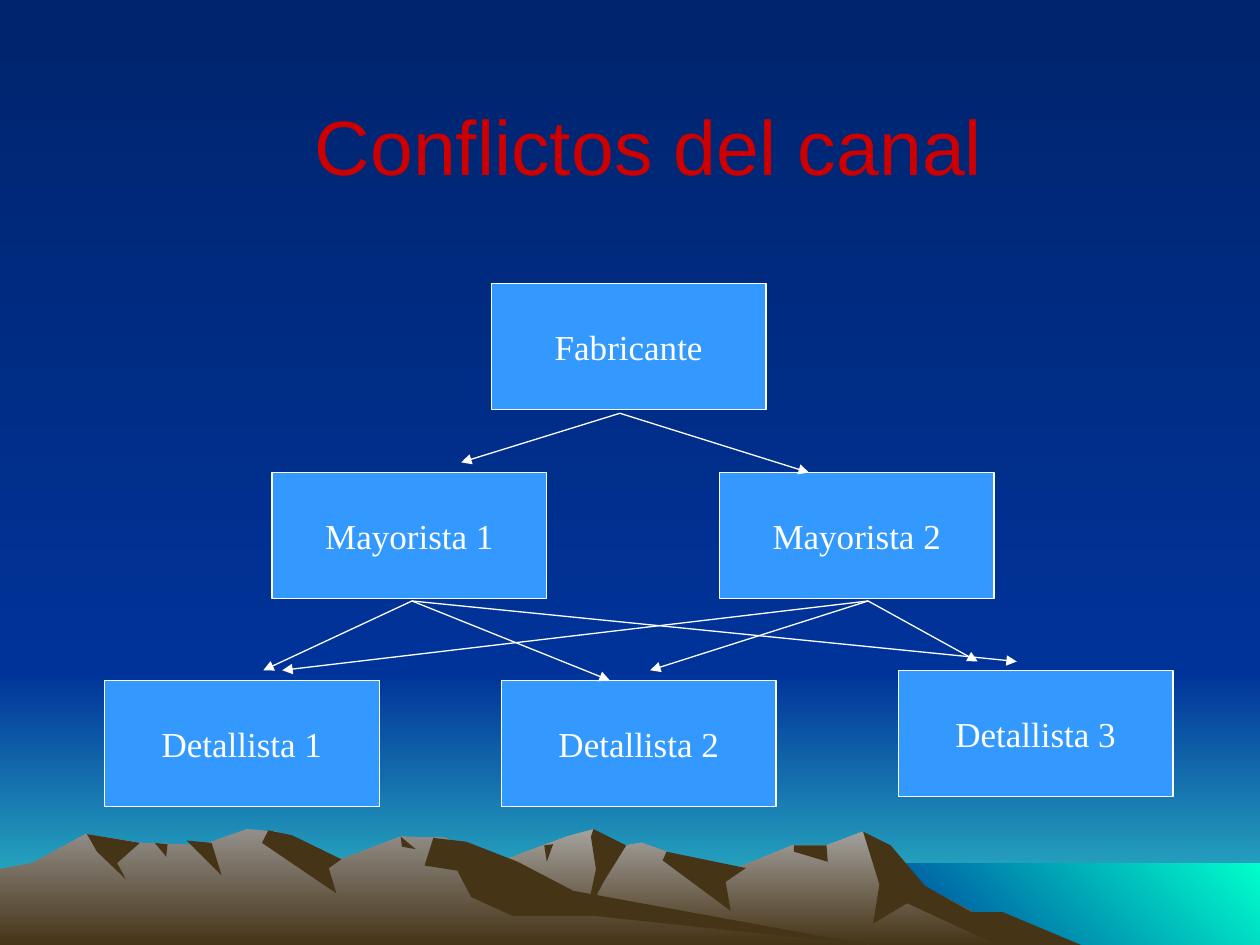
"""Build the channel conflict slide: a distribution tree above a mountain landscape."""
from lxml import etree
from pptx import Presentation
from pptx import util as u
from pptx.dml.color import RGBColor
from pptx.enum import shapes, text
from pptx.oxml import ns

SCALE = 9144
WIDTH, HEIGHT = 1000, 750
SHORE, SEA_LEFT, SEA_TOP = 533, 683, 685
COLOURS = {
    "night": "00246D", "blue": "003399", "horizon": "33CCCC", "sea": "00FFCC",
    "rock": "A5A29F", "stone": "938F8B", "earth": "463416",
    "title": "CC0000", "box": "3399FF", "white": "FFFFFF",
}
DOWN, UP_RIGHT = 270, 45
TITLE = ("Conflictos del canal", (90, 52, 850, 125))
BOX_SIZE = (218, 100)
BOX_GAP = 315
BOXES = [
    ("Fabricante", 390, 225),
    ("Mayorista 1", 216, 375), ("Mayorista 2", 571, 375),
    ("Detallista 1", 83, 540), ("Detallista 2", 83 + BOX_GAP, 540),
    ("Detallista 3", 83 + 2 * BOX_GAP, 532),
]
ARROWS = {
    (492, 328): [(366, 367), (642, 375)],
    (327, 477): [(209, 532), (484, 540), (807, 525)],
    (689, 477): [(776, 525), (516, 532), (224, 532)],
}
PANELS = [
    (("blue", "horizon", DOWN), 0, SHORE, WIDTH, HEIGHT),
    (("night", "blue", DOWN), 0, 0, WIDTH, SHORE),
    (("blue", "sea", UP_RIGHT), SEA_LEFT, SEA_TOP, WIDTH, HEIGHT),
]
FAR_RIDGE = [
    (258, HEIGHT), (394, 685), (450, 664), (471, 658), (486, 673), (509, 669), (529, 676),
    (566, 697), (629, 671), (656, 671), (685, 660), (723, 698), (821, HEIGHT),
]
FAR_SHADOWS = [
    [(685, 660), (707, 671), (734, 703), (771, 724), (796, 724), (858, HEIGHT),
     (792, HEIGHT), (720, 717), (693, 733), (698, 702)],
    [(471, 658), (497, 671), (479, 700), (465, 727), (473, 690), (469, 664)],
    [(529, 676), (592, 689), (576, 700), (580, 723), (526, 683)],
    [(630, 671), (656, 671), (657, 684), (630, 676)],
    [(432, 671), (439, 670), (434, 684)],
]
NEAR_RIDGE = [
    (0, HEIGHT), (0, 690), (26, 685), (68, 662), (111, 669), (160, 671), (196, 658),
    (219, 660), (271, 682), (318, 664), (354, 665), (432, 712), (690, HEIGHT),
]
NEAR_SHADOWS = [
    [(213, 659), (232, 663), (271, 682), (261, 689), (267, 709), (208, 669)],
    [(344, 665), (370, 668), (411, 684), (455, 707), (690, HEIGHT), (472, 727), (407, 727),
     (374, 712), (363, 691), (337, 687)],
    [(318, 664), (330, 674), (319, 672)],
    [(148, 667), (168, 669), (176, 695)],
    [(123, 669), (133, 670), (132, 680)],
    [(69, 662), (111, 669), (93, 685), (100, 698), (77, 676)],
]
LANDSCAPE = [
    (("rock", "earth", DOWN), [FAR_RIDGE]),
    (("earth",), FAR_SHADOWS),
    (("stone", "earth", DOWN), [NEAR_RIDGE]),
    (("earth",), NEAR_SHADOWS),
]


def px(*lengths):
    return [u.Emu(length * SCALE) for length in lengths]


def colour(name):
    return RGBColor.from_string(COLOURS[name])


def paint(fill, start, end=None, angle=0):
    if end is None:
        fill.solid()
        fill.fore_color.rgb = colour(start)
        return
    fill.gradient()
    fill.gradient_angle = angle
    for stop, name, position in zip(fill.gradient_stops, (start, end), (0, 1)):
        stop.color.rgb = colour(name)
        stop.position = position


def write(frame, words, size, font, name):
    frame.vertical_anchor = text.MSO_ANCHOR.MIDDLE
    para = frame.paragraphs[0]
    para.alignment = text.PP_ALIGN.CENTER
    span = para.add_run()
    span.text = words
    span.font.size = u.Pt(size)
    span.font.name = font
    span.font.color.rgb = colour(name)


def outline(line):
    line.color.rgb = colour("white")
    line.width = u.Pt(0.75)


def add_land(page, paint_names, points):
    builder = page.shapes.build_freeform(*points[0], scale=SCALE)
    builder.add_line_segments(points[1:], close=True)
    land = builder.convert_to_shape()
    land.shadow.inherit = False
    land.line.fill.background()
    paint(land.fill, *paint_names)


def add_box(page, words, left, top):
    box = page.shapes.add_shape(shapes.MSO_SHAPE.RECTANGLE, *px(left, top, *BOX_SIZE))
    box.shadow.inherit = False
    paint(box.fill, "box")
    outline(box.line)
    box.text_frame.word_wrap = False
    write(box.text_frame, words, 20, "Times New Roman", "white")


def add_arrow(page, start, end):
    arrow = page.shapes.add_connector(shapes.MSO_CONNECTOR.STRAIGHT, *px(*start, *end))
    outline(arrow.line)
    etree.SubElement(arrow.line._get_or_add_ln(), ns.qn("a:tailEnd"), type="triangle")
    etree.SubElement(arrow._element.spPr, ns.qn("a:effectLst"))


def main():
    deck = Presentation()
    deck.slide_width, deck.slide_height = px(WIDTH, HEIGHT)
    page = deck.slides.add_slide(deck.slide_layouts[5])
    paint(page.background.fill, "night", "blue", DOWN)
    for paint_names, left, top, right, bottom in PANELS:
        add_land(page, paint_names, [(left, top), (right, top), (right, bottom), (left, bottom)])
    for paint_names, outlines in LANDSCAPE:
        for points in outlines:
            add_land(page, paint_names, points)
    title = page.shapes.title
    words, place = TITLE
    title.left, title.top, title.width, title.height = px(*place)
    write(title.text_frame, words, 44, "Arial", "title")
    page.shapes._spTree.append(title._element)
    for box in BOXES:
        add_box(page, *box)
    for start, ends in ARROWS.items():
        for end in ends:
            add_arrow(page, start, end)
    deck.save("out.pptx")


if __name__ == "__main__":
    main()
